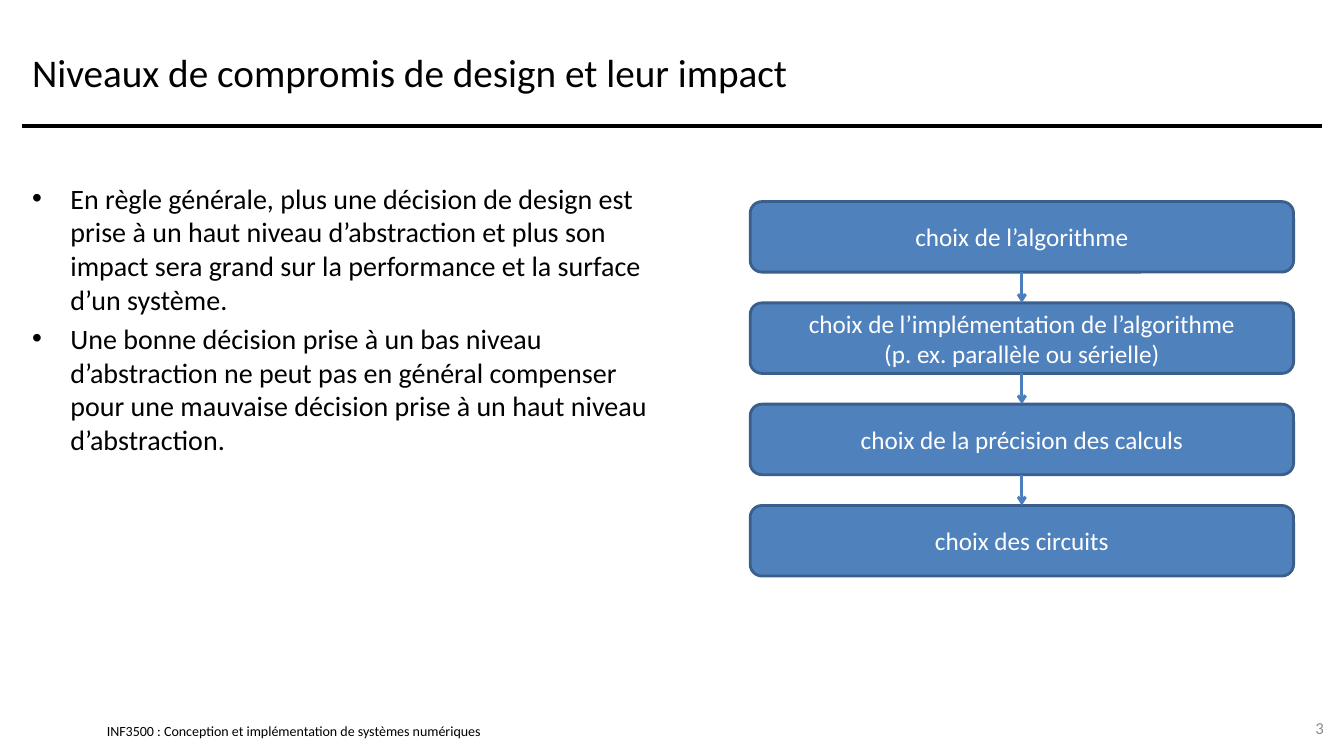
from itertools import pairwise

from lxml.etree import SubElement
from pptx import Presentation
from pptx.dml.color import RGBColor
from pptx.enum.shapes import MSO_CONNECTOR, MSO_SHAPE
from pptx.enum.text import MSO_ANCHOR, PP_ALIGN
from pptx.oxml.ns import qn
from pptx.util import Inches, Pt

TITLE = "Niveaux de compromis de design et leur impact"
ARGUMENTS = [
    "En règle générale, plus une décision de design est prise à un haut niveau d’abstraction "
    "et plus son impact sera grand sur la performance et la surface d’un système.",
    "Une bonne décision prise à un bas niveau d’abstraction ne peut pas en général compenser "
    "pour une mauvaise décision prise à un haut niveau d’abstraction.",
]
LEVELS = [
    "choix de l’algorithme",
    "choix de l’implémentation de l’algorithme\n(p. ex. parallèle ou sérielle)",
    "choix de la précision des calculs",
    "choix des circuits",
]
COURSE = "INF3500 : Conception et implémentation de systèmes numériques"
PAGE = "3"

THEME = {
    "font": "Calibri",
    "black": RGBColor(0x00, 0x00, 0x00),
    "white": RGBColor(0xFF, 0xFF, 0xFF),
    "grey": RGBColor(0x8C, 0x8C, 0x8C),
    "level": RGBColor(0x4F, 0x81, 0xBD),
    "border": RGBColor(0x3A, 0x5F, 0x8C),
    "arrow": RGBColor(0x4B, 0x7E, 0xBC),
    "title_size": 28,
    "body_size": 20,
    "level_size": 18,
    "page_size": 12,
    "course_size": 10,
}

LEFT, CONTENT_WIDTH = 0.22, 12.89
RULE_TOP = 1.25
LEVEL_LEFT, LEVEL_TOP, LEVEL_WIDTH, LEVEL_HEIGHT = 7.44, 2, 5.39, 0.7
LEVEL_PITCH = 1.005
BULLET_INDENT = Inches(0.38)
NO_MARGINS = dict.fromkeys(("margin_left", "margin_top", "margin_right", "margin_bottom"), 0)


def apply(target, values):
    for name, value in values.items():
        setattr(target, name, value)


def write(shape, paragraphs, size, color, align=PP_ALIGN.LEFT, bullets=False, **frame_format):
    frame = shape.text_frame
    apply(frame, {"word_wrap": True, "vertical_anchor": MSO_ANCHOR.MIDDLE, **frame_format})
    for index, text in enumerate(paragraphs):
        paragraph = frame.add_paragraph() if index else frame.paragraphs[0]
        paragraph.text = text
        paragraph.alignment = align
        if index:
            paragraph.space_before = Pt(size * 0.2)
        if bullets:
            properties = paragraph._p.get_or_add_pPr()
            properties.set("marL", str(BULLET_INDENT))
            properties.set("indent", str(-BULLET_INDENT))
            SubElement(properties, qn("a:buFont"), typeface="Arial")
            SubElement(properties, qn("a:buChar"), char="•")
        for run in paragraph.runs:
            apply(run.font, {"name": THEME["font"], "size": Pt(size)})
            run.font.color.rgb = color


def add_text(slide, place, *content, **text_format):
    write(slide.shapes.add_textbox(*map(Inches, place)), *content, **text_format)


def add_line(slide, start, end, color, width):
    line = slide.shapes.add_connector(MSO_CONNECTOR.STRAIGHT, *map(Inches, start + end))
    line.line.color.rgb = color
    line.line.width = Pt(width)
    SubElement(line._element.spPr, qn("a:effectLst"))
    return line


def add_level(slide, index, text):
    place = (LEVEL_LEFT, LEVEL_TOP + index * LEVEL_PITCH, LEVEL_WIDTH, LEVEL_HEIGHT)
    level = slide.shapes.add_shape(MSO_SHAPE.ROUNDED_RECTANGLE, *map(Inches, place))
    level.shadow.inherit = False
    level.fill.solid()
    level.fill.fore_color.rgb = THEME["level"]
    level.line.color.rgb = THEME["border"]
    level.line.width = Pt(2)
    write(level, [text], THEME["level_size"], THEME["white"], align=PP_ALIGN.CENTER)
    return level


def main():
    presentation = Presentation()
    apply(presentation, {"slide_width": Inches(13.33), "slide_height": Inches(7.5)})
    slide = presentation.slides.add_slide(presentation.slide_layouts[6])

    add_text(slide, (1.06, 7.17, 5.11, 0.17), [COURSE],
             THEME["course_size"], THEME["black"], **NO_MARGINS)
    add_line(slide, (LEFT, RULE_TOP), (LEFT + CONTENT_WIDTH, RULE_TOP), THEME["black"], 3)
    add_text(slide, (LEFT, 0.17, CONTENT_WIDTH, 1.08), [TITLE],
             THEME["title_size"], THEME["black"])
    add_text(slide, (LEFT, 1.75, 6.33, 5.08), ARGUMENTS, THEME["body_size"], THEME["black"],
             bullets=True, vertical_anchor=MSO_ANCHOR.TOP)
    add_text(slide, (12.56, 7.02, 0.67, 0.4), [PAGE],
             THEME["page_size"], THEME["grey"], align=PP_ALIGN.RIGHT)

    levels = [add_level(slide, index, text) for index, text in enumerate(LEVELS)]
    for upper, lower in pairwise(levels):
        arrow = add_line(slide, (0, 0), (0, 0), THEME["arrow"], 2)
        arrow.begin_connect(upper, 2)
        arrow.end_connect(lower, 0)
        SubElement(arrow.line._get_or_add_ln(), qn("a:tailEnd"), type="arrow")

    presentation.save("out.pptx")


if __name__ == "__main__":
    main()
